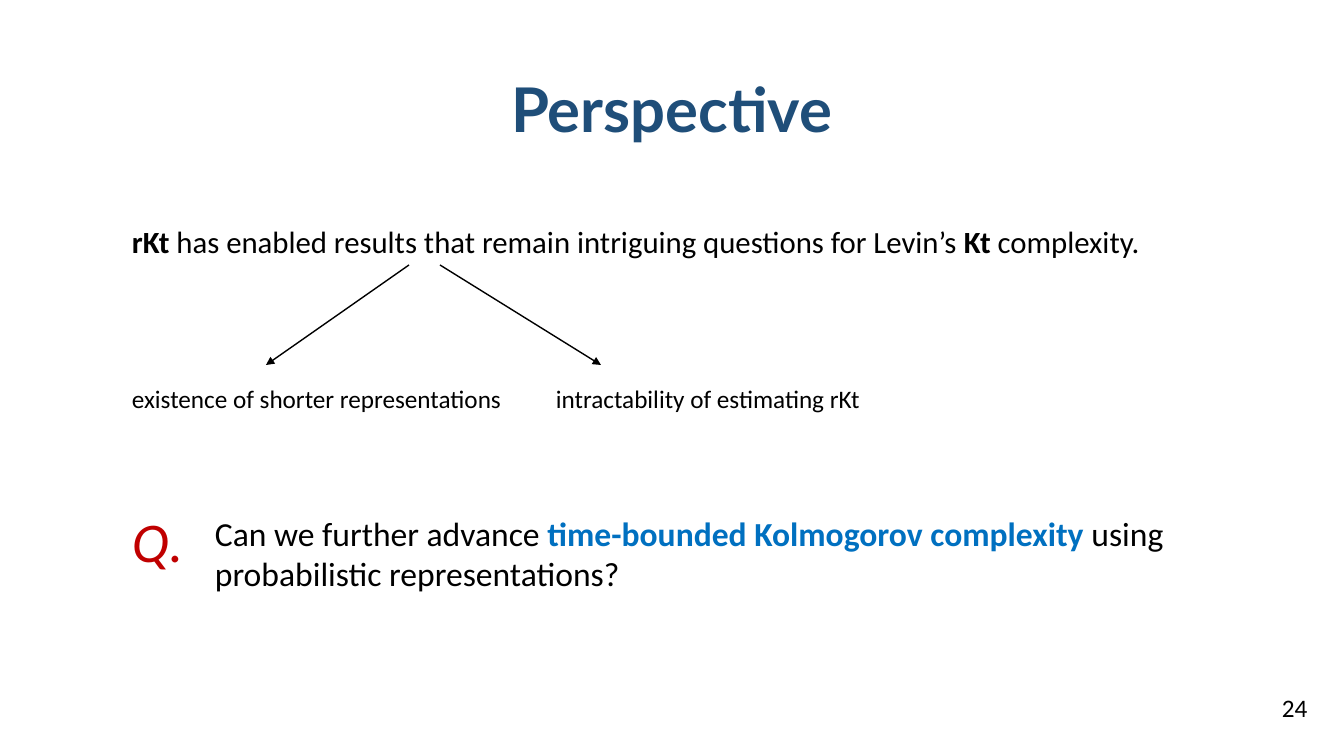
import pptx
import pptx.dml.color
import pptx.enum.shapes
import pptx.enum.text
import pptx.oxml.ns
import pptx.util
from lxml import etree

PX = 914400 / 100.8  # EMU in one px

THEME = {
    "heading_font": "Lato",
    "body_font": "Calibri",
    "title": 44, "question_mark": 40, "question": 24, "claim": 22, "label": 18,
    "navy": "1F4E79", "black": "000000", "red": "C00000", "blue": "0070C0",
}


def px(*lengths):
    return [pptx.util.Emu(round(n * PX)) for n in lengths]


def add_text(slide, box, size, runs, font="body_font"):
    """Add a text box; runs are (text, colour, style), style being "", "bold" or "italic"."""
    tf = slide.shapes.add_textbox(*px(*box)).text_frame
    tf.word_wrap = True
    tf.auto_size = pptx.enum.text.MSO_AUTO_SIZE.SHAPE_TO_FIT_TEXT
    p = tf.paragraphs[0]
    for text, color, style in runs:
        r = p.add_run()
        r.text = text
        r.font.name = THEME[font]
        r.font.size = pptx.util.Pt(THEME[size])
        r.font.color.rgb = pptx.dml.color.RGBColor.from_string(THEME[color])
        r.font.bold = style == "bold"
        r.font.italic = style == "italic"
    return p


prs = pptx.Presentation()
prs.slide_width, prs.slide_height = px(1344, 756)
s = prs.slides.add_slide(prs.slide_layouts[6])

title = add_text(s, (79, 66, 1186, 85), "title",
                 [("Perspective", "navy", "bold")], "heading_font")
title.alignment = pptx.enum.text.PP_ALIGN.CENTER

LEFT = 122
add_text(s, (LEFT, 218, 1186, 47), "claim", [
    ("rKt", "black", "bold"),
    (" has enabled results that remain intriguing questions for Levin’s ", "black", ""),
    ("Kt", "black", "bold"),
    (" complexity.", "black", ""),
])

# Each result: label, label left, label width, arrow start x, arrow end x
results = [
    ("existence of shorter representations", LEFT, 409, 409, 266),
    ("intractability of estimating rKt", 546, 487, 440, 601),
]
for label, left, width, x1, x2 in results:
    add_text(s, (left, 378, width, 40), "label", [(label, "black", "")])
    arrow = s.shapes.add_connector(
        pptx.enum.shapes.MSO_CONNECTOR.STRAIGHT, *px(x1, 265, x2, 365))
    arrow.line.width = pptx.util.Pt(1)
    arrow.line.color.rgb = pptx.dml.color.RGBColor.from_string(THEME["black"])
    ln = arrow.line._get_or_add_ln()
    etree.SubElement(ln, pptx.oxml.ns.qn("a:tailEnd"), type="triangle")
    etree.SubElement(ln.getparent(), pptx.oxml.ns.qn("a:effectLst"))

add_text(s, (LEFT, 502, 83, 78), "question_mark", [("Q.", "red", "italic")])
add_text(s, (205, 508, 987, 92), "question", [
    ("Can we further advance ", "black", ""),
    ("time-bounded Kolmogorov complexity ", "blue", "bold"),
    ("using probabilistic representations?", "black", ""),
])

add_text(s, (1272, 687, 54, 40), "label", [("24", "black", "")])

prs.save("out.pptx")
